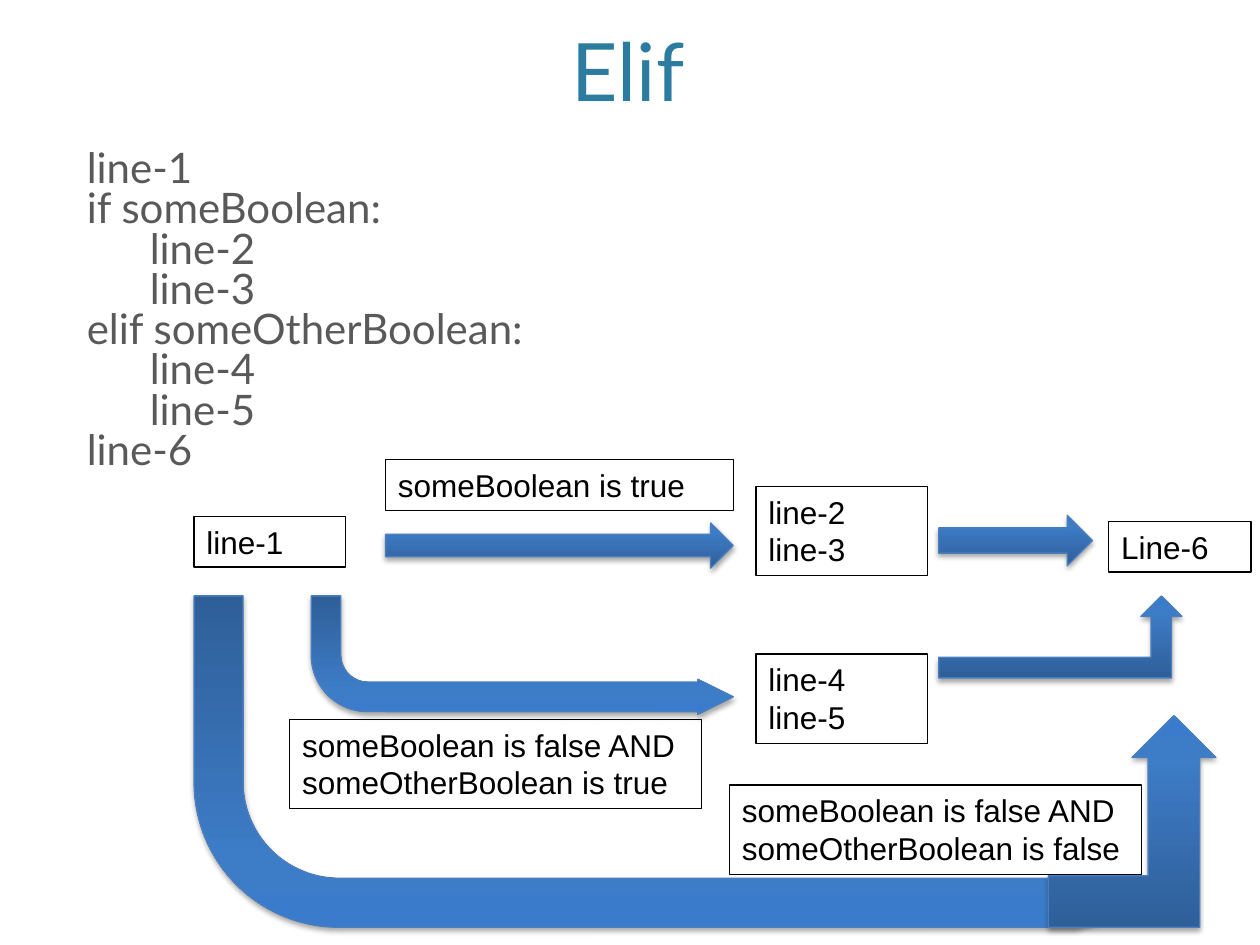
"""Build a slide that shows how control flows through an if/elif statement."""
from dataclasses import dataclass

from lxml import etree
from pptx import Presentation
from pptx import util as u
from pptx.dml.color import RGBColor
from pptx.enum import shapes, text
from pptx.oxml import parse_xml
from pptx.oxml.ns import nsdecls, qn
from pptx.slide import Slide

TITLE_BLUE = RGBColor(0x2C, 0x7C, 0x9F)
CODE_GRAY = RGBColor(0x59, 0x59, 0x59)
BLACK = RGBColor(0, 0, 0)
ARROW_EDGE = RGBColor(0x4B, 0x7E, 0xBC)
ARROW_DARK = RGBColor(0x2F, 0x5F, 0x99)
ARROW_MID = RGBColor(0x3D, 0x7C, 0xC7)
ARROW_LIGHT = RGBColor(0x3A, 0x7C, 0xCB)
GRADIENT = ((0, ARROW_DARK), (80, ARROW_MID), (100, ARROW_LIGHT))
LINE_WIDTH = u.Pt(0.75)
ONE_LINE, TWO_LINES = 0.4, 0.71
BRANCH_TOP = 4.73

CODE = (
    "line-1",
    "if someBoolean:",
    "\tline-2",
    "\tline-3",
    "elif someOtherBoolean:",
    "\tline-4",
    "\tline-5",
    "line-6",
)


@dataclass(frozen=True)
class Style:
    font: str
    size: float
    color: RGBColor
    align: text.PP_ALIGN = text.PP_ALIGN.LEFT
    anchor: text.MSO_ANCHOR = text.MSO_ANCHOR.TOP
    spacing: float = 1.0
    tab: float = 0


@dataclass(frozen=True)
class Box:
    lines: tuple[str, ...]
    left: float
    top: float
    width: float
    height: float


@dataclass(frozen=True)
class Arrow:
    kind: shapes.MSO_SHAPE
    left: float
    top: float
    width: float
    height: float
    adjustments: tuple[float, ...] = ()
    flipped: bool = False


TITLE_STYLE = Style("Lato", 46, TITLE_BLUE, text.PP_ALIGN.CENTER, text.MSO_ANCHOR.BOTTOM)
CODE_STYLE = Style("Lato", 24, CODE_GRAY, spacing=0.8, tab=0.5)
STEP_STYLE = Style("Arial", 18, BLACK)

TITLE = Box(("Elif",), 0.59, -0.48, 8.79, 1.46)
LISTING = Box(CODE, 0.59, 1.15, 8.79, 4.75)
STEPS = (
    Box(("line-1",), 1.54, 4.1, 1.2, ONE_LINE),
    Box(("someBoolean is true",), 3.06, 3.65, 2.76, ONE_LINE),
    Box(("line-2", "line-3"), 6, 3.86, 1.36, TWO_LINES),
    Box(("someBoolean is false AND", "someOtherBoolean is true"), 2.3, 5.71, 3.27, TWO_LINES),
    Box(("line-4", "line-5"), 6, 5.19, 1.36, TWO_LINES),
    Box(("Line-6",), 8.8, 4.14, 1.13, ONE_LINE),
    Box(("someBoolean is false AND", "someOtherBoolean is false"), 5.79, 6.23, 3.27, TWO_LINES),
)
ARROWS = (
    Arrow(shapes.MSO_SHAPE.RIGHT_ARROW, 3.06, 4.15, 2.76, 0.36),
    Arrow(shapes.MSO_SHAPE.BENT_ARROW, 2.47, BRANCH_TOP, 3.35, 0.94,
          (0.25, 0.148, 0.299, 0.477), True),
    Arrow(shapes.MSO_SHAPE.RIGHT_ARROW, 7.45, 4.09, 1.22, 0.4),
    Arrow(shapes.MSO_SHAPE.BENT_UP_ARROW, 7.45, BRANCH_TOP, 1.93, 0.65),
    Arrow(shapes.MSO_SHAPE.BENT_ARROW, 1.54, BRANCH_TOP, 7.65, 2.63,
          (0.25, 0.074, 0.25, 0.438), True),
    Arrow(shapes.MSO_SHAPE.BENT_UP_ARROW, 8.32, 5.68, 1.33, 1.68, (0.308, 0.25, 0.25)),
)


def add_box(slide: Slide, box: Box, style: Style, outlined: bool = False) -> None:
    panel = slide.shapes.add_textbox(*map(u.Inches, (box.left, box.top, box.width, box.height)))
    if outlined:
        panel.line.color.rgb = BLACK
        panel.line.width = LINE_WIDTH
    frame = panel.text_frame
    frame.word_wrap = True
    frame.vertical_anchor = style.anchor
    frame.text = "\n".join(box.lines)
    for paragraph in frame.paragraphs:
        paragraph.alignment = style.align
        paragraph.line_spacing = style.spacing
        if style.tab:
            tabs = etree.SubElement(paragraph._p.get_or_add_pPr(), qn("a:tabLst"))
            etree.SubElement(tabs, qn("a:tab"), pos=str(u.Inches(style.tab)), algn="l")
        paragraph.font.name = style.font
        paragraph.font.size = u.Pt(style.size)
        paragraph.font.color.rgb = style.color


def add_arrow(slide: Slide, arrow: Arrow) -> None:
    flow = slide.shapes.add_shape(
        arrow.kind, *map(u.Inches, (arrow.left, arrow.top, arrow.width, arrow.height)))
    for index, value in enumerate(arrow.adjustments):
        flow.adjustments[index] = value
    properties = flow._element.spPr
    if arrow.flipped:
        properties.find(qn("a:xfrm")).set("flipV", "1")
    flow.line.color.rgb = ARROW_EDGE
    flow.line.width = LINE_WIDTH
    stops = "".join(
        f'<a:gs pos="{position * 1000}"><a:srgbClr val="{color}"/></a:gs>'
        for position, color in GRADIENT)
    properties.find(qn("a:prstGeom")).addnext(parse_xml(
        f'<a:gradFill rotWithShape="1" {nsdecls("a")}><a:gsLst>{stops}</a:gsLst>'
        '<a:lin ang="16200000" scaled="0"/></a:gradFill>'))
    properties.append(parse_xml(
        f'<a:effectLst {nsdecls("a")}><a:outerShdw blurRad="{u.Pt(3.1)}" dist="{u.Pt(1.8)}" '
        'dir="5400000" rotWithShape="0"><a:srgbClr val="000000"><a:alpha val="35000"/>'
        '</a:srgbClr></a:outerShdw></a:effectLst>'))


def main() -> None:
    deck = Presentation()
    deck.slide_width, deck.slide_height = u.Inches(10), u.Inches(7.5)
    slide = deck.slides.add_slide(deck.slide_layouts[6])
    add_box(slide, TITLE, TITLE_STYLE)
    add_box(slide, LISTING, CODE_STYLE)
    for step in STEPS:
        add_box(slide, step, STEP_STYLE, outlined=True)
    for arrow in ARROWS:
        add_arrow(slide, arrow)
    deck.save("out.pptx")


if __name__ == "__main__":
    main()
